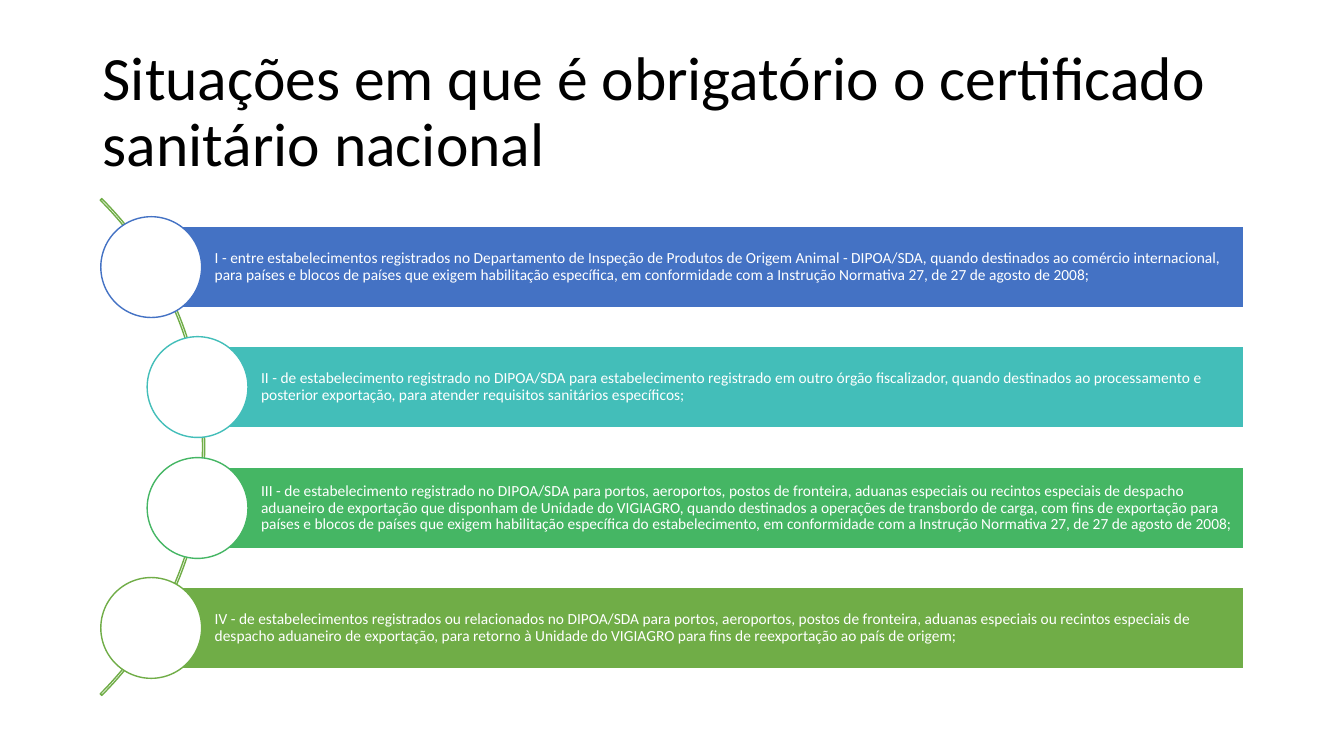
from dataclasses import dataclass

from pptx import Presentation
from pptx.dml.color import RGBColor
from pptx.enum.shapes import MSO_SHAPE
from pptx.enum.text import MSO_ANCHOR, PP_ALIGN
from pptx.shapes.autoshape import Shape
from pptx.slide import Slide
from pptx.util import Emu, Pt

ARC, BAR, DISC = MSO_SHAPE.BLOCK_ARC, MSO_SHAPE.RECTANGLE, MSO_SHAPE.OVAL
MIDDLE, LEFT = MSO_ANCHOR.MIDDLE, PP_ALIGN.LEFT
SCALE = 9144
WHITE, BLACK, GREEN = "FFFFFF", "000000", "70AD47"
RIGHT, TOP, STEP, HEIGHT, SIZE = 1234, 225, 119.4, 80, 100
TITLE = "Situações em que é obrigatório o certificado sanitário nacional"


@dataclass
class Case:
    left: int
    color: str
    text: str


CASES = [
    Case(150, "4472C4", "I - entre estabelecimentos registrados no Departamento de Inspeção de "
         "Produtos de Origem Animal - DIPOA/SDA, quando destinados ao comércio internacional, "
         "para países e blocos de países que exigem habilitação específica, em conformidade "
         "com a Instrução Normativa 27, de 27 de agosto de 2008;"),
    Case(196, "43BEB9", "II - de estabelecimento registrado no DIPOA/SDA para estabelecimento "
         "registrado em outro órgão fiscalizador, quando destinados ao processamento e "
         "posterior exportação, para atender requisitos sanitários específicos;"),
    Case(196, "45B664", "III - de estabelecimento registrado no DIPOA/SDA para portos, "
         "aeroportos, postos de fronteira, aduanas especiais ou recintos especiais de despacho "
         "aduaneiro de exportação que disponham de Unidade do VIGIAGRO, quando destinados a "
         "operações de transbordo de carga, com fins de exportação para países e blocos de "
         "países que exigem habilitação específica do estabelecimento, em conformidade com a "
         "Instrução Normativa 27, de 27 de agosto de 2008;"),
    Case(150, GREEN, "IV - de estabelecimentos registrados ou relacionados no DIPOA/SDA para "
         "portos, aeroportos, postos de fronteira, aduanas especiais ou recintos especiais de "
         "despacho aduaneiro de exportação, para retorno à Unidade do VIGIAGRO para fins de "
         "reexportação ao país de origem;"),
]


def px(*sizes: int) -> list[Emu]:
    """Turn px lengths into EMU."""
    return [Emu(size * SCALE) for size in sizes]


def rgb(color: str) -> RGBColor:
    """Turn a hex string into a colour."""
    return RGBColor.from_string(color)


def write(shape: Shape, text: str, *, size: int, color: str, inset: tuple[int, ...]) -> None:
    """Fill a shape with one left-aligned paragraph."""
    frame = shape.text_frame
    frame.word_wrap = True
    frame.vertical_anchor = MIDDLE
    (frame.margin_left, frame.margin_top,
     frame.margin_right, frame.margin_bottom) = px(*inset)
    para = frame.paragraphs[0]
    para.alignment = LEFT
    para.line_spacing = 0.9
    run = para.add_run()
    run.text = text
    run.font.name = "Calibri"
    run.font.size = Pt(size)
    run.font.color.rgb = rgb(color)


def draw(slide: Slide, kind: MSO_SHAPE, box: tuple[int, ...], line: str,
         fill: str | None = None) -> Shape:
    """Add an outlined shape, filled if a fill is given."""
    shape = slide.shapes.add_shape(kind, *px(*box))
    shape.shadow.inherit = False
    shape.line.color.rgb = rgb(line)
    shape.line.width = Pt(1)
    if fill:
        shape.fill.solid()
        shape.fill.fore_color.rgb = rgb(fill)
    else:
        shape.fill.background()
    return shape


def show(slide: Slide, case: Case, top: int) -> None:
    """Draw the bar and disc of one case."""
    bar = draw(slide, BAR, (case.left, top, RIGHT - case.left, HEIGHT), WHITE, case.color)
    write(bar, case.text, size=11, color=WHITE, inset=(63, 3, 3, 3))
    disc = (case.left - SIZE // 2, top + (HEIGHT - SIZE) // 2, SIZE, SIZE)
    draw(slide, DISC, disc, case.color, WHITE)


def main() -> None:
    """Build and save the slide."""
    deck = Presentation()
    deck.slide_width, deck.slide_height = px(1333, 750)
    slide = deck.slides.add_slide(deck.slide_layouts[6])
    title = slide.shapes.add_textbox(*px(92, 40, 1150, 145))
    write(title, TITLE, size=44, color=BLACK, inset=(10, 5, 10, 5))
    arc = draw(slide, ARC, (-494, 95, 697, 697), GREEN)
    for i, value in enumerate((189, 27, 0.0031)):
        arc.adjustments[i] = value
    for i, case in enumerate(CASES):
        show(slide, case, TOP + round(i * STEP))
    deck.save("out.pptx")


if __name__ == "__main__":
    main()
